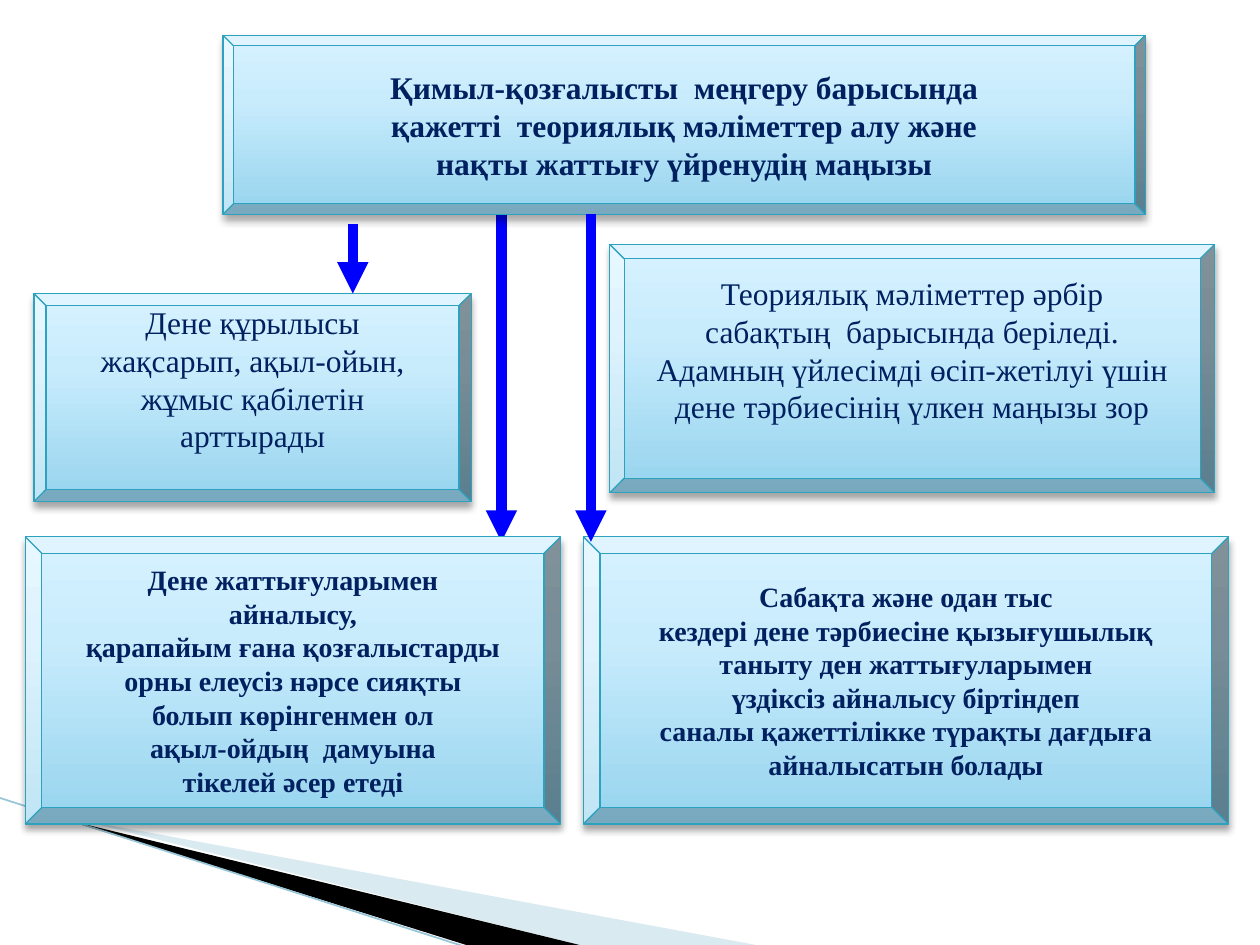
from pptx import Presentation, util as u
from pptx.dml.color import RGBColor
from pptx.enum import shapes as sh, text as tx
from pptx.oxml import parse_xml
from pptx.oxml.ns import nsdecls, qn

NS = nsdecls("a")
NAVY, BLUE, TEAL = "002060", "0000FF", "2DA2BF"

deck = Presentation()
deck.slide_width, deck.slide_height = u.Inches(10), u.Inches(7.5)
unit = deck.slide_width / 100  # grid of 100 columns by 75 rows
slide = deck.slides.add_slide(deck.slide_layouts[6])
shapes = slide.shapes


def paint(fill, color):
    fill.solid()
    fill.fore_color.rgb = RGBColor.from_string(color)


def draw_line(ends, color, width, head=False):
    line = shapes.add_connector(sh.MSO_CONNECTOR.STRAIGHT, *[round(v * unit) for v in ends])
    paint(line.line.fill, color)
    line.line.width = u.Pt(width)
    if head:
        line.line._get_or_add_ln().append(parse_xml(f'<a:tailEnd {NS} type="triangle"/>'))
    line.element.spPr.append(parse_xml(f"<a:effectLst {NS}/>"))


# Corner sweep behind the boxes
sweeps = [
    ("A0CBDC", 40, [(5.5, 65.1), (59.5, 75.1), (45.6, 75.1), (5.5, 65)]),
    ("000000", 100, [(5.3, 64.9), (45.7, 75.1), (37.2, 75.2), (5.4, 65)]),
]
for color, alpha, points in sweeps:
    pen = shapes.build_freeform(*points[0], scale=unit)
    pen.add_line_segments(points[1:])
    sweep = pen.convert_to_shape()
    paint(sweep.fill, color)
    sweep.line.fill.background()
    sweep.shadow.inherit = False
    tint = sweep.element.spPr.find(".//" + qn("a:srgbClr"))
    tint.append(parse_xml(f'<a:alpha {NS} val="{alpha * 1000}"/>'))
draw_line((-0.1, 63.3, 37.1, 75.2), "97C5D8", 0.95)

# The left long arrow ends behind the lower box
draw_line((39.8, 17, 39.8, 43), BLUE, 6, True)

# left, top, width, height, size, bold, rows kept free below the text, lines
boxes = [
    (17.7, 2.8, 73.2, 14.2, 18, True, 0, [
        "Қимыл-қозғалысты  меңгеру барысында",
        "қажетті  теориялық мәліметтер алу және",
        "нақты жаттығу үйренудің маңызы"]),
    (48.4, 19.4, 48, 19.7, 18, False, 3, [
        "Теориялық мәліметтер әрбір",
        "сабақтың  барысында беріледі.",
        "Адамның үйлесімді өсіп-жетілуі үшін",
        "дене тәрбиесінің үлкен маңызы зор"]),
    (2.7, 23.3, 34.7, 16.5, 18, False, 3, [
        "Дене құрылысы",
        "жақсарып, ақыл-ойын,",
        "жұмыс қабілетін",
        "арттырады"]),
    (2, 42.6, 42.5, 22.8, 16, True, 0, [
        "Дене жаттығуларымен",
        "айналысу,",
        "қарапайым ғана қозғалыстарды",
        "орны елеусіз нәрсе сияқты",
        "болып көрінгенмен ол",
        "ақыл-ойдың  дамуына",
        "тікелей әсер етеді"]),
    (46.3, 42.6, 51.2, 22.8, 16, True, 0, [
        "Сабақта және одан тыс",
        "кездері дене тәрбиесіне қызығушылық",
        "таныту ден жаттығуларымен",
        "үздіксіз айналысу біртіндеп",
        "саналы қажеттілікке түрақты дағдыға",
        "айналысатын болады"]),
]
stops = [(0, "96D4EE"), (65, "C9ECFC"), (100, "D7F2FF")]
for *place, size, bold, free, lines in boxes:
    box = shapes.add_shape(sh.MSO_SHAPE.BEVEL, *[round(v * unit) for v in place])
    box.adjustments[0] = 0.058
    box.fill.gradient()
    box.fill.gradient_angle = 90
    ramp = box.element.spPr.find(".//" + qn("a:gsLst"))
    ramp.clear()
    for pos, color in stops:
        ramp.append(parse_xml(
            f'<a:gs {NS} pos="{pos * 1000}"><a:srgbClr val="{color}"/></a:gs>'))
    paint(box.line.fill, TEAL)
    box.line.width = u.Pt(0.75)
    box.shadow.inherit = False
    box.element.spPr.find(qn("a:effectLst")).append(parse_xml(
        f'<a:outerShdw {NS} blurRad="{u.Pt(4)}" dist="{u.Pt(3)}" dir="5400000" rotWithShape="0">'
        '<a:srgbClr val="000000"><a:alpha val="35000"/></a:srgbClr></a:outerShdw>'))
    frame = box.text_frame
    frame.word_wrap = False
    frame.vertical_anchor = tx.MSO_ANCHOR.MIDDLE
    frame.margin_bottom = round((0.5 + free) * unit)
    frame.text = "\n".join(lines)
    for para in frame.paragraphs:
        para.alignment = tx.PP_ALIGN.CENTER
        font = para.runs[0].font
        font.name, font.size, font.bold = "Times New Roman", u.Pt(size), bold
        paint(font.fill, NAVY)

# Arrows in front of the boxes
for x, top, end in [(28, 17.8, 23.3), (46.9, 17, 43)]:
    draw_line((x, top, x, end), BLUE, 6, True)

deck.save("out.pptx")
